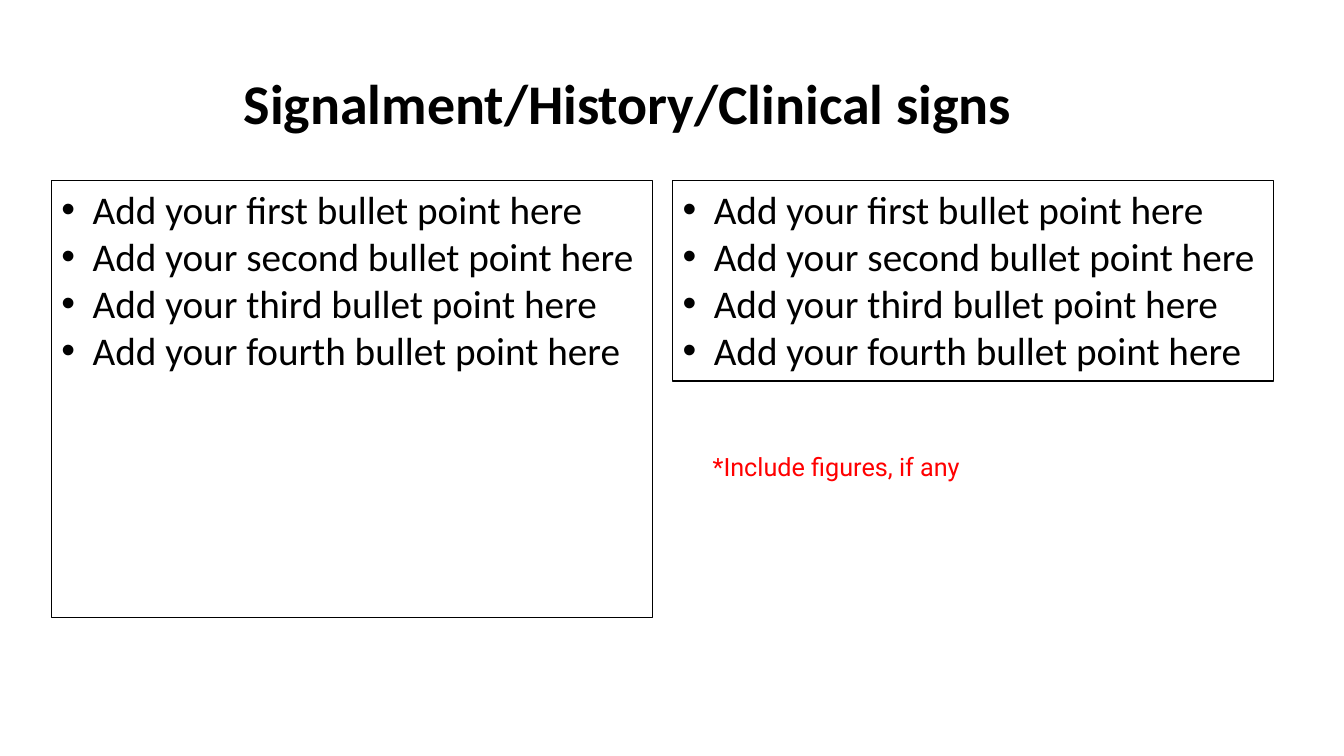
from lxml import etree
from pptx import Presentation
from pptx.dml.color import RGBColor
from pptx.enum.text import MSO_ANCHOR, MSO_AUTO_SIZE, PP_ALIGN
from pptx.oxml.ns import qn
from pptx.util import Inches, Pt

TOP, MIDDLE = MSO_ANCHOR.TOP, MSO_ANCHOR.MIDDLE
LEFT, CENTER = PP_ALIGN.LEFT, PP_ALIGN.CENTER
NO_AUTOFIT = MSO_AUTO_SIZE.NONE
TWO_CONTENT_LAYOUT = 3

COLORS = {"text": "000000", "border": "000000", "note": "FF0000"}
FORMATS = {
    "title": {"name": "Calibri", "size": Pt(40), "bold": True},
    "list": {"name": "Calibri", "size": Pt(28), "bold": False},
    "note": {"name": "Roboto", "size": Pt(18), "bold": False},
}
BULLET_INDENT = Inches(0.31)
COLUMN_TOP, COLUMN_WIDTH = 1.79, 5.96


class SlideBuilder:
    def __init__(self, presentation):
        layout = presentation.slide_layouts[TWO_CONTENT_LAYOUT]
        self.slide = presentation.slides.add_slide(layout)

    def place(self, shape, box):
        names = ("left", "top", "width", "height")
        for name, value in zip(names, box):
            setattr(shape, name, Inches(value))

    def fill_text(self, shape, lines, style, color, anchor=TOP, align=LEFT, spacing=1.0):
        frame = shape.text_frame
        settings = {"word_wrap": True, "auto_size": NO_AUTOFIT, "vertical_anchor": anchor}
        for name, value in settings.items():
            setattr(frame, name, value)
        frame.text = "\n".join(lines)
        paragraph_format = {"alignment": align, "line_spacing": spacing, "space_before": Pt(0)}
        for paragraph in frame.paragraphs:
            for name, value in paragraph_format.items():
                setattr(paragraph, name, value)
            font = paragraph.runs[0].font
            for name, value in FORMATS[style].items():
                setattr(font, name, value)
            font.color.rgb = RGBColor.from_string(COLORS[color])

    def title(self, text, box):
        shape = self.slide.shapes.title
        self.place(shape, box)
        self.fill_text(shape, [text], "title", "text", MIDDLE, CENTER, 0.9)

    def bullet_list(self, index, lines, box):
        shape = self.slide.placeholders[index]
        self.place(shape, box)
        shape.line.color.rgb = RGBColor.from_string(COLORS["border"])
        shape.line.width = Pt(0.75)
        self.fill_text(shape, lines, "list", "text")
        for paragraph in shape.text_frame.paragraphs:
            properties = paragraph._p.get_or_add_pPr()
            properties.set("marL", str(BULLET_INDENT))
            properties.set("indent", str(-BULLET_INDENT))
            etree.SubElement(properties, qn("a:buFont"), typeface="Arial")
            etree.SubElement(properties, qn("a:buChar"), char="•")

    def note(self, text, box):
        shape = self.slide.shapes.add_textbox(*(Inches(value) for value in box))
        self.fill_text(shape, [text], "note", "note")


def main():
    presentation = Presentation()
    presentation.slide_width = Inches(13.33)
    presentation.slide_height = Inches(7.5)
    builder = SlideBuilder(presentation)

    # Heading
    builder.title("Signalment/History/Clinical signs", (0.31, 0.73, 11.83, 0.66))

    # Two bordered lists
    points = [f"Add your {order} bullet point here"
              for order in ("first", "second", "third", "fourth")]
    for index, left, height in ((1, 0.51, 4.34), (2, 6.67, 1.99)):
        builder.bullet_list(index, points, (left, COLUMN_TOP, COLUMN_WIDTH, height))

    # Reminder under the right list
    builder.note("*Include figures, if any", (6.97, 4.43, 2.68, 0.4))

    presentation.save("out.pptx")


if __name__ == "__main__":
    main()
